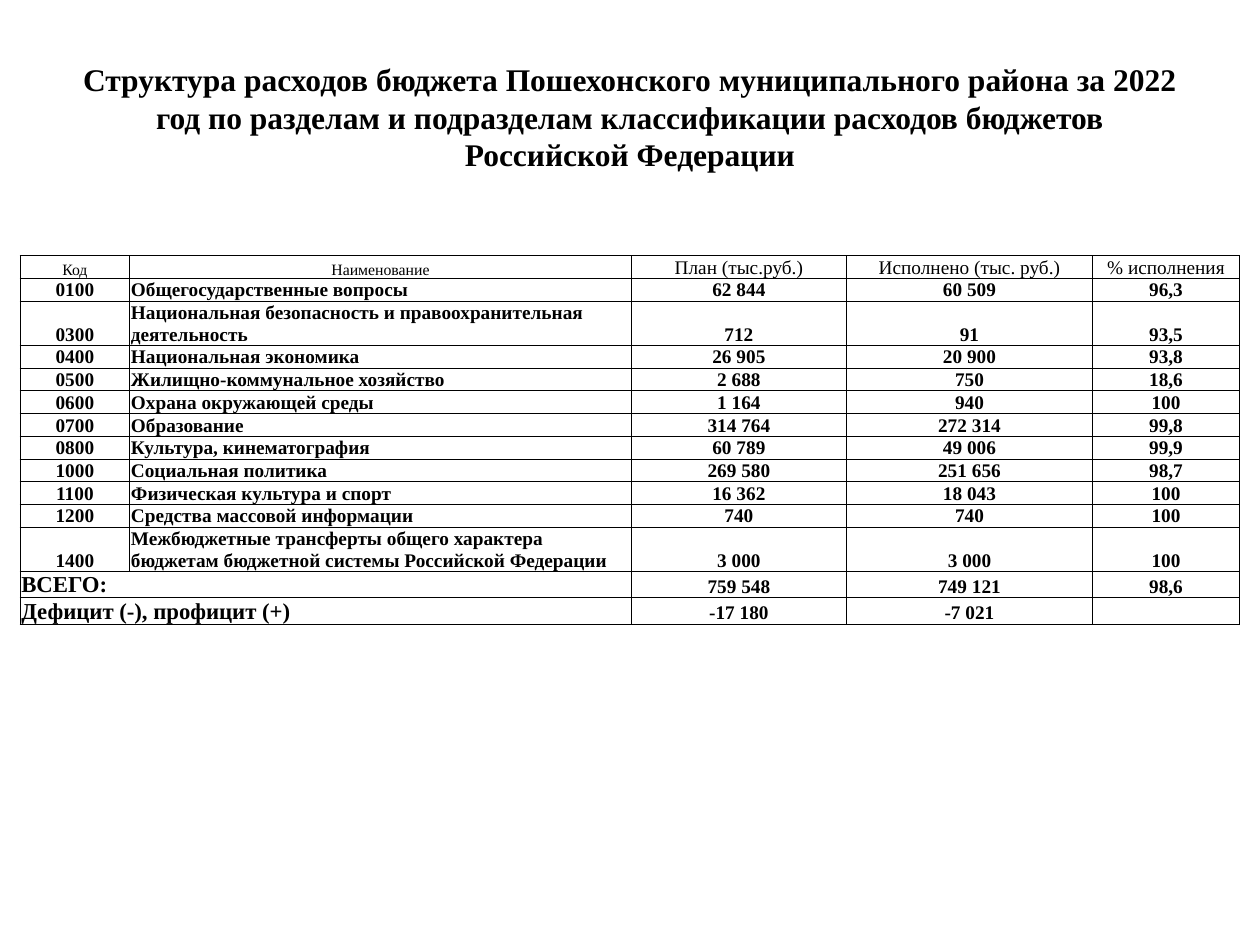
from lxml.etree import SubElement as Sub
from pptx import Presentation
from pptx.dml.color import RGBColor
from pptx.enum.text import MSO_ANCHOR as Anchor, MSO_AUTO_SIZE as Auto, PP_ALIGN as Align
from pptx.oxml.ns import qn
from pptx.util import Inches, Pt

FONT = "Times New Roman"
INK = "000000"
TITLE = ("Структура расходов бюджета Пошехонского муниципального района за 2022 год "
         "по разделам и подразделам классификации расходов бюджетов Российской Федерации")
COLS = [0.87, 3.98, 1.71, 1.95, 1.17]
LINE, PAIR, SUM = 0.18, 0.35, 0.21  # row heights: one line, two lines, totals
HEAD = ["Код", "Наименование", "План (тыс.руб.)", "Исполнено (тыс. руб.)", "% исполнения"]
BODY = [
    ["0100", "Общегосударственные вопросы", "62 844", "60 509", "96,3"],
    ["0300", "Национальная безопасность и правоохранительная деятельность", "712", "91", "93,5"],
    ["0400", "Национальная экономика", "26 905", "20 900", "93,8"],
    ["0500", "Жилищно-коммунальное хозяйство", "2 688", "750", "18,6"],
    ["0600", "Охрана окружающей среды", "1 164", "940", "100"],
    ["0700", "Образование", "314 764", "272 314", "99,8"],
    ["0800", "Культура, кинематография", "60 789", "49 006", "99,9"],
    ["1000", "Социальная политика", "269 580", "251 656", "98,7"],
    ["1100", "Физическая культура и спорт", "16 362", "18 043", "100"],
    ["1200", "Средства массовой информации", "740", "740", "100"],
    ["1400", "Межбюджетные трансферты общего характера бюджетам бюджетной системы "
             "Российской Федерации", "3 000", "3 000", "100"],
]
TOTALS = [
    ["ВСЕГО:", "", "759 548", "749 121", "98,6"],
    ["Дефицит (-), профицит (+)", "", "-17 180", "-7 021", ""],
]


def color(code):
    return RGBColor.from_string(code)


def write(frame, text, size=11, bold=True, align=Align.CENTER):
    para = frame.paragraphs[0]
    para.alignment = align
    if not text:  # keeps an empty cell from growing its row
        Sub(para._p, qn("a:endParaRPr"), sz=str(size * 100))
        return
    run = para.add_run()
    run.text = text
    font = run.font
    font.name, font.size, font.bold = FONT, Pt(size), bold
    font.color.rgb = color(INK)


def border(cell):
    props = cell._tc.get_or_add_tcPr()
    for side in ("lnL", "lnR", "lnT", "lnB"):
        line = Sub(props, qn(f"a:{side}"), w=str(Pt(0.5)))
        fill = Sub(line, qn("a:solidFill"))
        Sub(fill, qn("a:srgbClr"), val=INK)


def style(cell, anchor):
    border(cell)
    cell.fill.background()
    cell.vertical_anchor = anchor
    cell.margin_left = cell.margin_right = cell.margin_top = Inches(0.01)
    cell.margin_bottom = 0


def add_title(slide):
    title = slide.shapes.title
    title.left, title.top = Inches(0.5), Inches(0.3)
    title.width, title.height = Inches(9), Inches(1.25)
    frame = title.text_frame
    frame.word_wrap, frame.auto_size = True, Auto.NONE
    frame.vertical_anchor = Anchor.MIDDLE
    write(frame, TITLE, size=18)


def add_budget(slide):
    rows = [HEAD] + BODY + TOTALS
    highs = [LINE] + [PAIR if len(row[1]) > 50 else LINE for row in BODY] + [SUM] * len(TOTALS)
    shape = slide.shapes.add_table(len(rows), len(COLS), Inches(0.16), Inches(2.03),
                                   Inches(sum(COLS)), Inches(sum(highs)))
    table = shape.table
    table.first_row = table.horz_banding = False
    for col, wide in zip(table.columns, COLS):
        col.width = Inches(wide)
    for row, high in zip(table.rows, highs):
        row.height = Inches(high)

    last = len(BODY)
    for r, row in enumerate(rows):
        head, total = r == 0, r > last
        if total:
            table.cell(r, 0).merge(table.cell(r, 1))
        for c, text in enumerate(row):
            cell = table.cell(r, c)
            style(cell, Anchor.MIDDLE if head and c in (2, 3) else Anchor.BOTTOM)
            size = 9 if head and c < 2 else 13 if total and c == 0 else 11
            left = (total and c == 0) or (not head and c == 1)
            write(cell.text_frame, text, size=size, bold=not head,
                  align=Align.LEFT if left else Align.CENTER)


def main():
    deck = Presentation()
    deck.slide_width, deck.slide_height = Inches(10), Inches(7.5)
    slide = deck.slides.add_slide(deck.slide_layouts[5])
    add_title(slide)
    add_budget(slide)
    deck.save("out.pptx")


if __name__ == "__main__":
    main()
